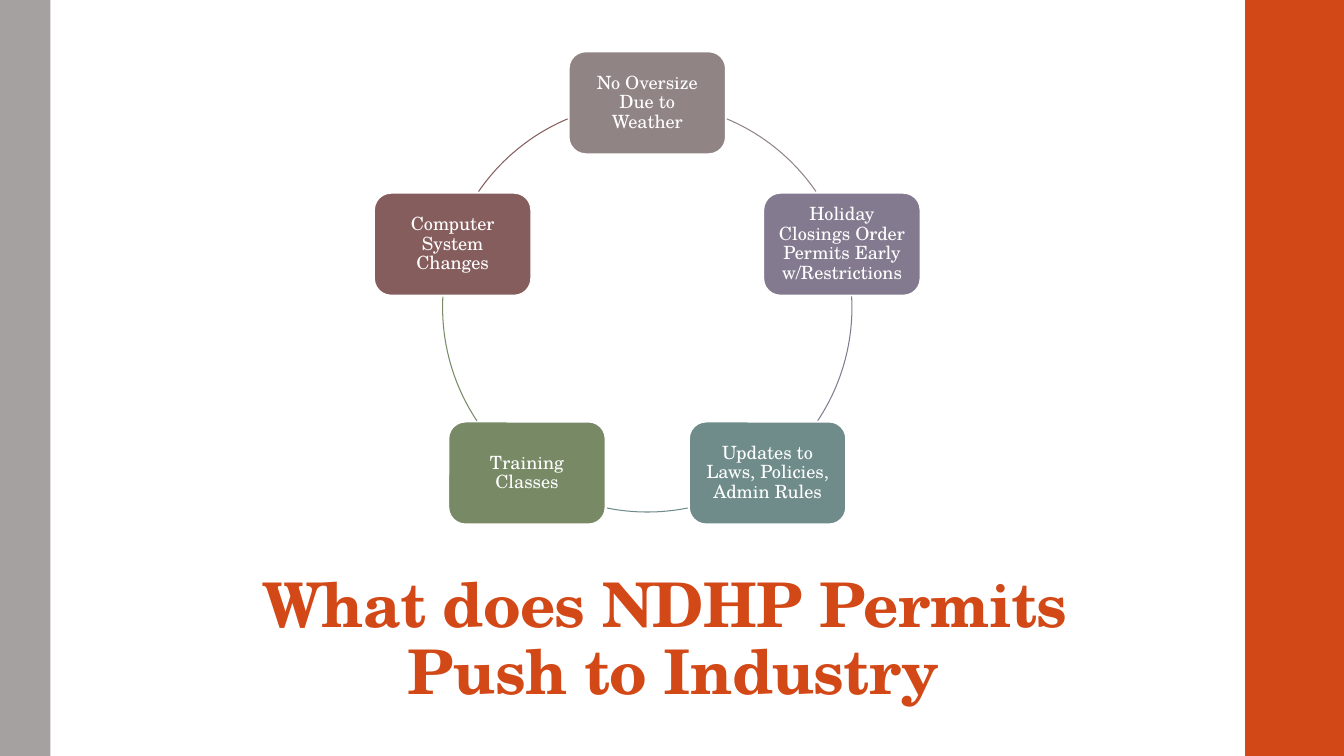
"""Build a slide showing the cycle of notices that NDHP Permits pushes to industry."""
from dataclasses import dataclass
from math import cos, radians, sin

from pptx import Presentation
from pptx.dml.color import RGBColor
from pptx.enum.shapes import MSO_SHAPE
from pptx.enum.text import MSO_ANCHOR, MSO_AUTO_SIZE, PP_ALIGN
from pptx.util import Inches, Pt

RECTANGLE = MSO_SHAPE.RECTANGLE
ROUNDED = MSO_SHAPE.ROUNDED_RECTANGLE
ARC = MSO_SHAPE.ARC
CENTER = PP_ALIGN.CENTER
MIDDLE = MSO_ANCHOR.MIDDLE
BOTTOM = MSO_ANCHOR.BOTTOM
NO_AUTOFIT = MSO_AUTO_SIZE.NONE


@dataclass(frozen=True)
class Theme:
    font: str = "TeX Gyre Schola"
    accent: str = "D34817"
    edge: str = "A6A1A1"
    white: str = "FFFFFF"
    title_size: float = 44
    card_size: float = 13
    card_line: float = 1.35
    arc_line: float = 0.75
    line_spacing: float = 0.9


class CycleSlide:
    def __init__(self, slide, theme):
        self.slide = slide
        self.theme = theme

    def shape(self, kind, left, top, width, height):
        shape = self.slide.shapes.add_shape(
            kind, Inches(left), Inches(top), Inches(width), Inches(height))
        shape.shadow.inherit = False
        return shape

    def fill(self, shape, color):
        shape.fill.solid()
        shape.fill.fore_color.rgb = RGBColor.from_string(color)

    def outline(self, shape, color, width):
        shape.line.color.rgb = RGBColor.from_string(color)
        shape.line.width = Pt(width)

    def frame(self, shape, anchor, insets):
        frame = shape.text_frame
        frame.word_wrap = True
        frame.auto_size = NO_AUTOFIT
        frame.vertical_anchor = anchor
        (frame.margin_left, frame.margin_top,
         frame.margin_right, frame.margin_bottom) = map(Inches, insets)
        paragraph = frame.paragraphs[0]
        paragraph.alignment = CENTER
        paragraph.line_spacing = self.theme.line_spacing
        return paragraph

    def run(self, paragraph, text, size, color, bold=False):
        run = paragraph.add_run()
        run.text = text
        run.font.name = self.theme.font
        run.font.size = Pt(size)
        run.font.bold = bold
        run.font.color.rgb = RGBColor.from_string(color)
        return run

    def band(self, left, width, color):
        band = self.shape(RECTANGLE, left, 0, width, 7.5)
        self.fill(band, color)
        band.line.fill.background()

    def title(self, lines, left, top, width, height):
        title = self.slide.shapes.title
        title.left, title.top = Inches(left), Inches(top)
        title.width, title.height = Inches(width), Inches(height)
        paragraph = self.frame(title, BOTTOM, (0.1, 0.03, 0.1, 0.05))
        for index, line in enumerate(lines):
            if index:
                paragraph.add_line_break()
            run = self.run(paragraph, line, self.theme.title_size, self.theme.accent, True)
            run._r.get_or_add_rPr().set("spc", "-50")

    def card(self, center_x, center_y, width, height, text, color):
        card = self.shape(ROUNDED, center_x - width / 2, center_y - height / 2, width, height)
        self.fill(card, color)
        self.outline(card, self.theme.white, self.theme.card_line)
        paragraph = self.frame(card, MIDDLE, (0.1, 0.1, 0.1, 0.1))
        self.run(paragraph, text, self.theme.card_size, self.theme.white)

    def arc(self, center_x, center_y, radius, start, end, color):
        arc = self.shape(ARC, center_x - radius, center_y - radius, 2 * radius, 2 * radius)
        for index, angle in enumerate((start, end)):
            arc.adjustments[index] = angle % 360 * 0.6
        arc.fill.background()
        self.outline(arc, color, self.theme.arc_line)


def main():
    presentation = Presentation()
    presentation.slide_width, presentation.slide_height = Inches(13.33), Inches(7.5)
    theme = Theme()
    cycle = CycleSlide(presentation.slides.add_slide(presentation.slide_layouts[5]), theme)

    cycle.band(12.35, 1, theme.accent)
    cycle.band(0, 0.5, theme.edge)
    cycle.title(("What does NDHP Permits ", "Push to Industry"), 1.38, 5.62, 10.6, 1.45)

    center_x, center_y, radius = 6.42, 3.05, 2.03
    card_width, card_height = 1.56, 1.02
    notices = (
        ("No Oversize Due to Weather", "918485", -67.1, -34.5),
        ("Holiday Closings Order Permits Early w/Restrictions", "837A8F", -3.1, 33.7),
        ("Updates to Laws, Policies, Admin Rules", "6F8C8B", 78.6, 101.4),
        ("Training Classes", "788966", 146.3, 183.1),
        ("Computer System Changes", "855D5D", 214.5, 247.1),
    )
    for index, (text, color, arc_start, arc_end) in enumerate(notices):
        angle = radians(360 / len(notices) * index - 90)
        cycle.card(center_x + radius * cos(angle), center_y + radius * sin(angle),
                   card_width, card_height, text, color)
        cycle.arc(center_x, center_y, radius, arc_start, arc_end, color)

    presentation.save("out.pptx")


if __name__ == "__main__":
    main()
